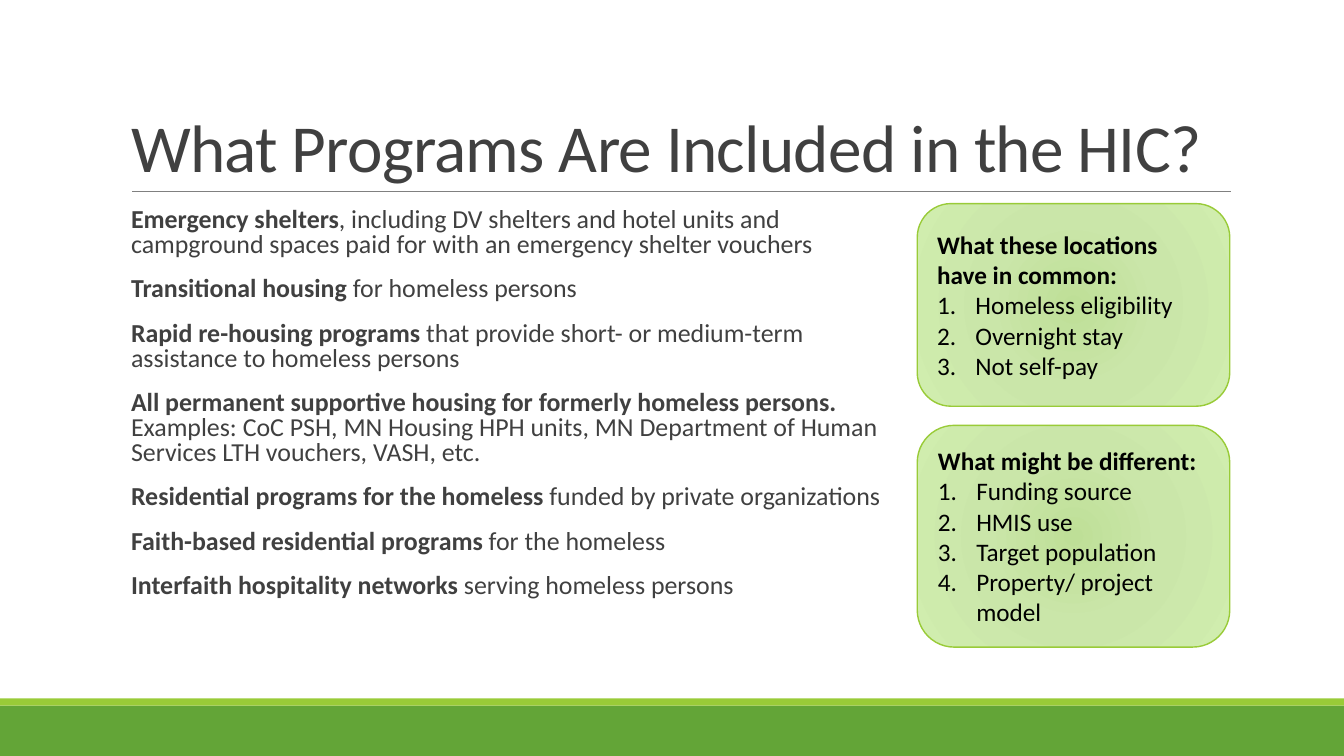
from dataclasses import dataclass

from pptx import Presentation
from pptx.dml.color import RGBColor
from pptx.enum.shapes import MSO_CONNECTOR, MSO_SHAPE
from pptx.enum.text import MSO_ANCHOR, MSO_AUTO_SIZE, PP_ALIGN
from pptx.oxml import parse_xml
from pptx.oxml.ns import nsdecls
from pptx.oxml.xmlchemy import OxmlElement
from pptx.shapes.autoshape import Shape
from pptx.slide import Slide
from pptx.text.text import _Run
from pptx.util import Inches, Pt

GREEN = RGBColor(0x63, 0xA5, 0x37)
LIME = RGBColor(0x99, 0xCB, 0x38)
GRAY = RGBColor(0x80, 0x80, 0x80)
DARK = RGBColor(0x40, 0x40, 0x40)
BLACK = RGBColor(0, 0, 0)
GLOW = (
    (0, RGBColor(0xBE, 0xDF, 0x97)),
    (45, RGBColor(0xCA, 0xE6, 0xA9)),
    (100, RGBColor(0xD0, 0xED, 0xAE)),
)
FONT = "Calibri"
CELL = Inches(0.1)
COLS, ROWS = 133.33, 75


@dataclass(frozen=True)
class Area:
    col: float
    row: float
    cols: float
    rows: float

    def box(self) -> tuple[int, ...]:
        return tuple(round(n * CELL) for n in (self.col, self.row, self.cols, self.rows))


@dataclass(frozen=True)
class Program:
    name: str
    detail: str


@dataclass(frozen=True)
class Card:
    area: Area
    heading: str
    items: tuple[str, ...]


@dataclass(frozen=True)
class Band:
    area: Area
    color: RGBColor


BANDS = (
    Band(Area(0, 70, COLS, 5), GREEN),
    Band(Area(0, 69.3, COLS, 0.7), LIME),
)
TITLE = Area(12, 3.1, 110, 15.9)
BODY = Area(13, 20.2, 75.9, 44)
PROGRAMS = (
    Program("Emergency shelters", ", including DV shelters and hotel units and campground spaces "
            "paid for with an emergency shelter vouchers"),
    Program("Transitional housing ", "for homeless persons"),
    Program("Rapid re-housing programs ",
            "that provide short- or medium-term assistance to homeless persons"),
    Program("All permanent supportive housing for formerly homeless persons. ",
            "Examples: CoC PSH, MN Housing HPH units, MN Department of Human Services "
            "LTH vouchers, VASH, etc."),
    Program("Residential programs for the homeless ", "funded by private organizations"),
    Program("Faith-based residential programs ", "for the homeless"),
    Program("Interfaith hospitality networks ", "serving homeless persons"),
)
CARDS = (
    Card(Area(91, 20.2, 31, 20.1), "What these locations have in common:",
         ("Homeless eligibility", "Overnight stay", "Not self-pay")),
    Card(Area(91, 42.2, 31, 22), "What might be different:",
         ("Funding source", "HMIS use", "Target population", "Property/ project model")),
)


def style(r: _Run, size: float, color: RGBColor, bold: bool = False) -> None:
    r.font.name = FONT
    r.font.size = Pt(size)
    r.font.color.rgb = color
    r.font.bold = bold


def add_band(s: Slide, band: Band) -> None:
    sp = s.shapes.add_shape(MSO_SHAPE.RECTANGLE, *band.area.box())
    sp.shadow.inherit = False
    sp.fill.solid()
    sp.fill.fore_color.rgb = band.color
    sp.line.fill.background()


def add_rule(s: Slide) -> None:
    x1, y, width, _ = Area(13.1, 19, 109, 0).box()
    ln = s.shapes.add_connector(MSO_CONNECTOR.STRAIGHT, x1, y, x1 + width, y)
    ln.line.color.rgb = GRAY
    ln.line.width = Pt(0.5)
    ln._element.spPr.append(OxmlElement("a:effectLst"))


def add_title(s: Slide, text: str) -> None:
    sp = s.shapes.title
    sp.left, sp.top, sp.width, sp.height = TITLE.box()
    tf = sp.text_frame
    tf.text = text
    tf.auto_size = MSO_AUTO_SIZE.NONE
    tf.vertical_anchor = MSO_ANCHOR.BOTTOM
    p = tf.paragraphs[0]
    p.alignment = PP_ALIGN.LEFT
    p.line_spacing = 0.85
    r = p.runs[0]
    style(r, 48, DARK)
    r._r.get_or_add_rPr().set("spc", "-50")


def add_programs(s: Slide) -> None:
    tf = s.shapes.add_textbox(*BODY.box()).text_frame
    tf.word_wrap = True
    tf.margin_left = tf.margin_right = 0
    for i, program in enumerate(PROGRAMS):
        p = tf.add_paragraph() if i else tf.paragraphs[0]
        p.line_spacing = 0.8
        p.space_before = Pt(12)
        p.space_after = Pt(2)
        for text, bold in ((program.name, True), (program.detail, False)):
            r = p.add_run()
            r.text = text
            style(r, 18.5, DARK, bold)


def fill_glow(sp: Shape) -> None:
    stops = "".join(
        f'<a:gs pos="{pos * 1000}"><a:srgbClr val="{color}"/></a:gs>' for pos, color in GLOW
    )
    grad = parse_xml(
        f'<a:gradFill {nsdecls("a")} rotWithShape="1"><a:gsLst>{stops}</a:gsLst>'
        '<a:path path="circle"><a:fillToRect l="100000" t="100000" r="100000" b="100000"/>'
        "</a:path></a:gradFill>"
    )
    sp.fill.solid()
    spPr = sp._element.spPr
    spPr.replace(spPr.find("{*}solidFill"), grad)


def add_card(s: Slide, card: Card) -> None:
    sp = s.shapes.add_shape(MSO_SHAPE.ROUNDED_RECTANGLE, *card.area.box())
    sp.shadow.inherit = False
    fill_glow(sp)
    sp.line.color.rgb = LIME
    sp.line.width = Pt(1)
    tf = sp.text_frame
    tf.word_wrap = True
    tf.vertical_anchor = MSO_ANCHOR.MIDDLE
    tf.text = "\n".join((card.heading, *card.items))
    for i, p in enumerate(tf.paragraphs):
        p.alignment = PP_ALIGN.LEFT
        style(p.runs[0], 18, BLACK, bold=i == 0)
        if i:
            pPr = p._p.get_or_add_pPr()
            pPr.set("marL", str(Inches(0.38)))
            pPr.set("indent", str(-Inches(0.38)))
            number = OxmlElement("a:buAutoNum")
            number.set("type", "arabicPeriod")
            pPr.append(number)


def main() -> None:
    prs = Presentation()
    prs.slide_width, prs.slide_height = Area(0, 0, COLS, ROWS).box()[2:]
    s = prs.slides.add_slide(prs.slide_layouts[5])
    for band in BANDS:
        add_band(s, band)
    add_rule(s)
    add_title(s, "What Programs Are Included in the HIC?")
    add_programs(s)
    for card in CARDS:
        add_card(s, card)
    prs.save("out.pptx")


if __name__ == "__main__":
    main()
